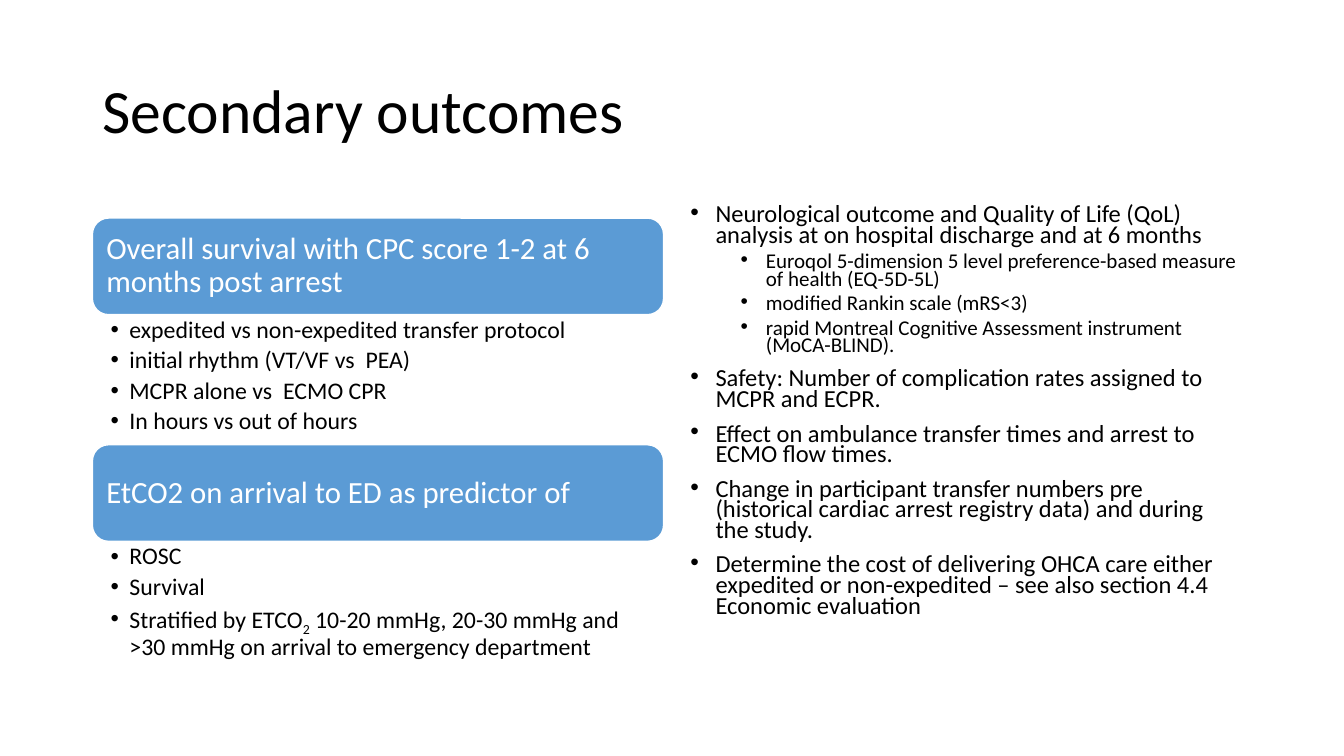
import pptx
import pptx.util
import pptx.enum.shapes
import pptx.enum.text
import pptx.dml.color
import lxml.etree

Pt = pptx.util.Pt
ANCHOR = pptx.enum.text.MSO_ANCHOR
COLORS = {"ink": "000000", "band": "5B9BD5", "paper": "FFFFFF"}

deck = pptx.Presentation()
deck.slide_width, deck.slide_height = Pt(960), Pt(540)
slide = deck.slides.add_slide(deck.slide_layouts[6])


def set_frame(shape, anchor, left=7.2, top=3.6, right=7.2):
    frame = shape.text_frame
    settings = {
        "word_wrap": True,
        "vertical_anchor": anchor,
        "margin_left": Pt(left),
        "margin_right": Pt(right),
        "margin_top": Pt(top),
        "margin_bottom": Pt(top),
    }
    for name, value in settings.items():
        setattr(frame, name, value)
    return frame


def write(paragraph, text, size, color, spacing=0.9, before=0, after=0, indent=None, hang=0):
    settings = {
        "alignment": pptx.enum.text.PP_ALIGN.LEFT,
        "line_spacing": spacing,
        "space_before": Pt(before),
        "space_after": Pt(after),
    }
    for name, value in settings.items():
        setattr(paragraph, name, value)
    for position, part in enumerate(text.split("|")):
        run = paragraph.add_run()
        run.text = part
        run.font.name = "Calibri"
        run.font.size = Pt(size)
        run.font.color.rgb = pptx.dml.color.RGBColor.from_string(COLORS[color])
        if position == 1:
            run._r.get_or_add_rPr().set("baseline", "-25000")
    if indent is not None:
        properties = paragraph._p.get_or_add_pPr()
        properties.set("marL", str(Pt(indent)))
        properties.set("indent", str(-Pt(hang)))
        for tag, key, value in (("buFont", "typeface", "Arial"), ("buChar", "char", "•")):
            bullet = lxml.etree.SubElement(properties, pptx.oxml.ns.qn("a:" + tag))
            bullet.set(key, value)


title = slide.shapes.add_textbox(Pt(66), Pt(28.75), Pt(828), Pt(104.4))
write(set_frame(title, ANCHOR.MIDDLE).paragraphs[0], "Secondary outcomes", 44, "ink")

outcome_groups = [
    (155.8, "Overall survival with CPC score 1-2 at 6 months post arrest", 93, [
        "expedited vs non-expedited transfer protocol",
        "initial rhythm (VT/VF vs  PEA)",
        "MCPR alone vs  ECMO CPR",
        "In hours vs out of hours",
    ]),
    (317.7, "EtCO2 on arrival to ED as predictor of", 88, [
        "ROSC",
        "Survival",
        "Stratified by ETCO|2| 10-20 mmHg, 20-30 mmHg and >30 mmHg on arrival to emergency department",
    ]),
]
BAND_HEIGHT = 69
for top, heading, details_height, details in outcome_groups:
    band = slide.shapes.add_shape(
        pptx.enum.shapes.MSO_SHAPE.ROUNDED_RECTANGLE, Pt(66), Pt(top), Pt(408), Pt(BAND_HEIGHT))
    band.shadow.inherit = False
    band.fill.solid()
    band.fill.fore_color.rgb = pptx.dml.color.RGBColor.from_string(COLORS["band"])
    band.line.color.rgb = pptx.dml.color.RGBColor.from_string(COLORS["paper"])
    band.line.width = Pt(1)
    band_text = set_frame(band, ANCHOR.MIDDLE, left=6.6, right=6.6)
    write(band_text.paragraphs[0], heading, 22, "paper")

    details_box = slide.shapes.add_textbox(
        Pt(66), Pt(top + BAND_HEIGHT), Pt(408), Pt(details_height))
    details_text = set_frame(details_box, ANCHOR.TOP, left=12.95, top=2.16, right=12.1)
    for index, detail in enumerate(details):
        paragraph = details_text.add_paragraph() if index else details_text.paragraphs[0]
        write(paragraph, detail, 17, "ink", after=3.4, indent=13.5, hang=13.5)

measures = [
    (0, "Neurological outcome and Quality of Life (QoL) analysis at on hospital discharge and at 6 months"),
    (1, "Euroqol 5-dimension 5 level preference-based measure of health (EQ-5D-5L)"),
    (1, "modified Rankin scale (mRS<3)"),
    (1, "rapid Montreal Cognitive Assessment instrument (MoCA-BLIND)."),
    (0, "Safety: Number of complication rates assigned to MCPR and ECPR."),
    (0, "Effect on ambulance transfer times and arrest to ECMO flow times."),
    (0, "Change in participant transfer numbers pre (historical cardiac arrest registry data) and during the study."),
    (0, "Determine the cost of delivering OHCA care either expedited or non-expedited – see also section 4.4 "
        "Economic evaluation"),
]
LEVEL_FORMATS = [
    {"size": 17.5, "before": 10, "indent": 18},
    {"size": 15, "before": 5, "indent": 54},
]
measures_box = slide.shapes.add_textbox(Pt(486), Pt(143.75), Pt(408), Pt(342.6))
measures_text = set_frame(measures_box, ANCHOR.TOP)
for index, (level, measure) in enumerate(measures):
    paragraph = measures_text.add_paragraph() if index else measures_text.paragraphs[0]
    paragraph.level = level
    write(paragraph, measure, color="ink", spacing=0.7, hang=18, **LEVEL_FORMATS[level])

deck.save("out.pptx")
